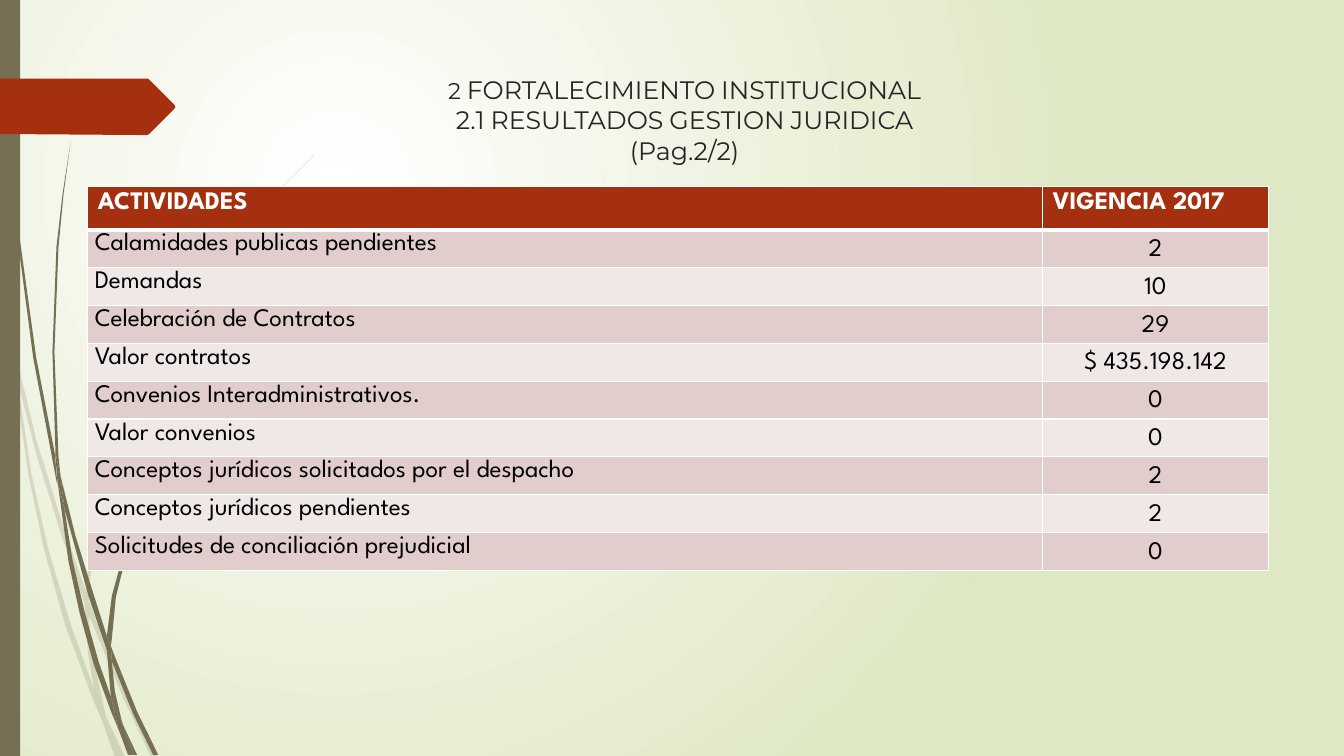
from lxml import etree
from pptx import Presentation
from pptx.dml.color import RGBColor
from pptx.enum.shapes import MSO_SHAPE
from pptx.enum.text import MSO_ANCHOR, PP_ALIGN
from pptx.oxml import parse_xml
from pptx.oxml.ns import qn
from pptx.util import Inches, Pt

CENTER, LEFT, JUSTIFY = PP_ALIGN.CENTER, PP_ALIGN.LEFT, PP_ALIGN.JUSTIFY
TOP, MIDDLE = MSO_ANCHOR.TOP, MSO_ANCHOR.MIDDLE
RECTANGLE = MSO_SHAPE.RECTANGLE

COLORS = {
    "white": "FFFFFF", "pale_green": "DFE8C4", "olive": "766F54",
    "rust": "A53010", "title": "262626", "black": "000000",
    "dark_band": "E1CDCC", "light_band": "F0E8E7",
}
TITLE_FONT, TABLE_FONT = "Montserrat", "League Spartan"
BIG, SMALL = 18, 16.2
HEADER_HEIGHT, TABLE_HEIGHT = 0.43, 3.81

TITLE_LINES = [
    [("2 ", SMALL), ("FORTALECIMIENTO", BIG), (" ", SMALL), ("INSTITUCIONAL", BIG)],
    [("2.1", BIG), (" ", SMALL), ("RESULTADOS", BIG), (" ", SMALL),
     ("GESTION", BIG), (" ", SMALL), ("JURIDICA", BIG)],
    [("(Pag.2/2)", BIG)],
]
HEADER = ("ACTIVIDADES", "VIGENCIA 2017")
ACTIVITIES = [
    ("Calamidades publicas pendientes", "2"),
    ("Demandas", "10"),
    ("Celebración de Contratos", "29"),
    ("Valor contratos", "$ 435.198.142"),
    ("Convenios Interadministrativos.", "0"),
    ("Valor convenios", "0"),
    ("Conceptos jurídicos solicitados por el despacho", "2"),
    ("Conceptos jurídicos pendientes", "2"),
    ("Solicitudes de conciliación prejudicial", "0"),
]

# Corner points of the leaf sections that make up each tuft of grass
FADED_TUFT = [
    [(0.11, 3.5), (0.09, 3.22), (0, 2.82), (0, 2.99), (0.1, 3.44)],
    [(0.58, 5.22), (0.84, 5.99), (0.85, 5.86), (0.62, 5.2), (0.36, 4.36),
     (0.14, 3.45), (0.17, 3.76), (0.36, 4.51)],
    [(0.92, 6.07), (0.88, 5.96), (0.88, 6.1), (1.23, 6.94), (1.5, 7.51),
     (1.55, 7.51), (1.27, 6.92)],
    [(1.19, 7.51), (1.24, 7.51), (1.05, 7.11)],
    [(0.93, 6.83), (0.7, 6.19), (0.48, 5.45), (0.31, 4.69), (0.17, 3.76), (0.11, 3.5),
     (0.28, 4.7), (0.44, 5.46), (0.65, 6.21), (0.92, 6.93), (1.01, 7.14), (0.99, 7.07)],
    [(0.84, 5.99), (0.87, 6.46), (0.93, 6.83), (0.96, 6.92), (1.05, 7.11),
     (0.91, 6.46), (0.88, 6.1), (0.88, 6.08)],
    [(0.88, 5.84), (0.96, 5.22), (1.1, 4.62), (1.6, 3.49), (2.29, 2.45), (2.68, 1.98),
     (3.12, 1.54), (3.12, 1.53), (2.68, 1.97), (2.28, 2.44), (1.58, 3.48),
     (1.07, 4.61), (0.92, 5.22), (0.85, 5.84), (0.85, 5.86), (0.88, 5.96)],
    [(1.01, 7.14), (1.14, 7.51), (1.19, 7.51)],
    [(0.88, 6.08), (0.88, 6.1), (0.88, 5.96), (0.85, 5.86), (0.84, 5.99)],
    [(0.96, 6.92), (0.93, 6.83), (0.99, 7.07), (1.01, 7.14), (1.19, 7.51), (1.05, 7.11)],
]
SOLID_TUFT = [
    [(0.07, 1.1), (0.17, 2.33), (0.33, 3.55), (0.56, 4.77), (0.57, 4.81), (0.55, 4.57),
     (0.55, 4.53), (0.36, 3.55), (0.19, 2.32), (0.08, 1.09), (0.05, 0.48),
     (0.04, 0), (0.03, 0), (0.04, 0.48)],
    [(0.88, 5.92), (1.06, 6.45), (1.06, 6.33), (1.06, 6.31), (0.93, 5.9),
     (0.75, 5.32), (0.6, 4.72), (0.64, 5.05)],
    [(1.13, 6.49), (1.1, 6.41), (1.11, 6.56), (1.32, 7.08), (1.52, 7.49),
     (1.57, 7.49), (1.36, 7.06)],
    [(1.1, 6.91), (0.98, 6.57), (0.84, 6.07), (0.72, 5.56), (0.64, 5.05), (0.57, 4.77),
     (0.68, 5.57), (0.79, 6.08), (0.93, 6.59), (1.11, 7.08), (1.17, 7.22), (1.16, 7.17)],
    [(0.6, 4.72), (0.58, 4.53), (0.54, 3.49), (0.58, 2.45), (0.63, 1.93), (0.7, 1.41),
     (0.62, 1.93), (0.56, 2.45), (0.52, 3.49), (0.55, 4.49)],
    [(1.33, 7.49), (1.36, 7.49), (1.22, 7.19)],
    [(0.57, 4.77), (0.64, 5.05), (0.6, 4.72), (0.55, 4.49), (0.55, 4.53)],
    [(1.11, 6.33), (1.15, 5.92), (1.25, 5.52), (1.58, 4.76), (2.05, 4.06), (2.31, 3.74),
     (2.61, 3.44), (2.6, 3.44), (2.31, 3.73), (2.04, 4.05), (1.56, 4.74),
     (1.22, 5.51), (1.11, 5.91), (1.06, 6.31), (1.1, 6.41)],
    [(1.17, 7.22), (1.27, 7.49), (1.31, 7.49)],
    [(1.06, 6.45), (1.1, 6.91), (1.16, 7.06), (1.22, 7.19), (1.21, 7.16),
     (1.14, 6.86), (1.11, 6.56), (1.09, 6.51)],
    [(1.06, 6.45), (1.09, 6.51), (1.11, 6.56), (1.1, 6.41), (1.06, 6.31), (1.06, 6.33)],
    [(1.16, 7.06), (1.1, 6.91), (1.16, 7.17), (1.17, 7.22), (1.3, 7.49),
     (1.33, 7.49), (1.22, 7.19)],
]
BANNER = [(1.73, 1.08), (1.48, 1.33), (1.46, 1.34), (1.36, 1.34), (0, 1.33), (0, 0.78),
          (1.36, 0.78), (1.46, 0.78), (1.48, 0.79), (1.73, 1.04), (1.74, 1.06)]


def rgb(name):
    return RGBColor.from_string(COLORS[name])


def add_span(para, text, font=TABLE_FONT, size=BIG, color="black", bold=False):
    span = para.add_run()
    span.text = text
    span.font.name, span.font.size, span.font.bold = font, Pt(size), bold
    span.font.color.rgb = rgb(color)


def paint(shape, color, opacity=100):
    shape.shadow.inherit = False
    shape.fill.solid()
    shape.fill.fore_color.rgb = rgb(color)
    shape.line.fill.background()
    if opacity < 100:
        tint = shape.element.spPr.find(qn("a:solidFill"))[0]
        etree.SubElement(tint, qn("a:alpha")).set("val", str(opacity * 1000))


def set_background(page):
    """Fill the page with a circular gradient centred up and to the left."""
    stops = "".join(
        f'<a:gs pos="{pos}"><a:srgbClr val="{COLORS[name]}"/></a:gs>'
        for pos, name in ((0, "white"), (100000, "pale_green")))
    page.element.cSld.insert(0, parse_xml(
        '<p:bg xmlns:p="http://schemas.openxmlformats.org/presentationml/2006/main" '
        'xmlns:a="http://schemas.openxmlformats.org/drawingml/2006/main">'
        f'<p:bgPr><a:gradFill rotWithShape="1"><a:gsLst>{stops}</a:gsLst>'
        '<a:path path="circle"><a:fillToRect l="50000" t="50000" r="100000" b="100000"/>'
        '</a:path></a:gradFill><a:effectLst/></p:bgPr></p:bg>'))


def add_outline(page, points, color, opacity=100):
    corners = [(Inches(x), Inches(y)) for x, y in points]
    builder = page.shapes.build_freeform(*corners[0])
    builder.add_line_segments(corners[1:], close=True)
    paint(builder.convert_to_shape(), color, opacity)


def add_title(page):
    box = page.shapes.add_textbox(Inches(1), Inches(0.69), Inches(11.58), Inches(0.74))
    frame = box.text_frame
    frame.word_wrap = True
    frame.vertical_anchor = TOP
    para = frame.paragraphs[0]
    para.alignment = CENTER
    for index, line in enumerate(TITLE_LINES):
        if index:
            para.add_line_break()
        for text, size in line:
            add_span(para, text, font=TITLE_FONT, size=size, color="title")


def set_borders(cell, bottom=1):
    properties = cell._tc.get_or_add_tcPr()
    for index, side in enumerate(("lnL", "lnR", "lnT", "lnB")):
        width = bottom if side == "lnB" else 1
        line = etree.Element(qn(f"a:{side}"), w=str(Pt(width)))
        fill = etree.SubElement(line, qn("a:solidFill"))
        etree.SubElement(fill, qn("a:srgbClr")).set("val", COLORS["white"])
        properties.insert(index, line)


def fill_cell(cell, text, fill, align, **span_format):
    cell.fill.solid()
    cell.fill.fore_color.rgb = rgb(fill)
    para = cell.text_frame.paragraphs[0]
    para.alignment = align
    add_span(para, text, **span_format)
    return para


def add_activities(page):
    table = page.shapes.add_table(
        len(ACTIVITIES) + 1, 2, Inches(0.87), Inches(1.85),
        Inches(11.71), Inches(TABLE_HEIGHT)).table
    for column, width in zip(table.columns, (9.47, 2.24)):
        column.width = Inches(width)
    row_height = (TABLE_HEIGHT - HEADER_HEIGHT) / len(ACTIVITIES)
    for index, row in enumerate(table.rows):
        row.height = Inches(row_height if index else HEADER_HEIGHT)
    for column, text in enumerate(HEADER):
        cell = table.cell(0, column)
        fill_cell(cell, text, "rust", LEFT, color="white", bold=True)
        set_borders(cell, bottom=3)
    for row, texts in enumerate(ACTIVITIES, 1):
        band = "dark_band" if row % 2 else "light_band"
        for column, text in enumerate(texts):
            cell = table.cell(row, column)
            para = fill_cell(cell, text, band, CENTER if column else JUSTIFY)
            para.line_spacing = 1.15
            cell.vertical_anchor = MIDDLE if column else TOP
            cell.margin_left = cell.margin_right = Inches(0.07)
            cell.margin_top = cell.margin_bottom = 0
            set_borders(cell)


def main():
    deck = Presentation()
    deck.slide_width, deck.slide_height = Inches(13.33), Inches(7.5)
    page = deck.slides.add_slide(deck.slide_layouts[6])
    set_background(page)
    for tuft, opacity in ((FADED_TUFT, 20), (SOLID_TUFT, 100)):
        for section in tuft:
            add_outline(page, section, "olive", opacity)
    side_bar = page.shapes.add_shape(RECTANGLE, 0, 0, Inches(0.2), deck.slide_height)
    paint(side_bar, "olive")
    add_outline(page, BANNER, "rust")
    add_title(page)
    add_activities(page)
    deck.save("out.pptx")


if __name__ == "__main__":
    main()
